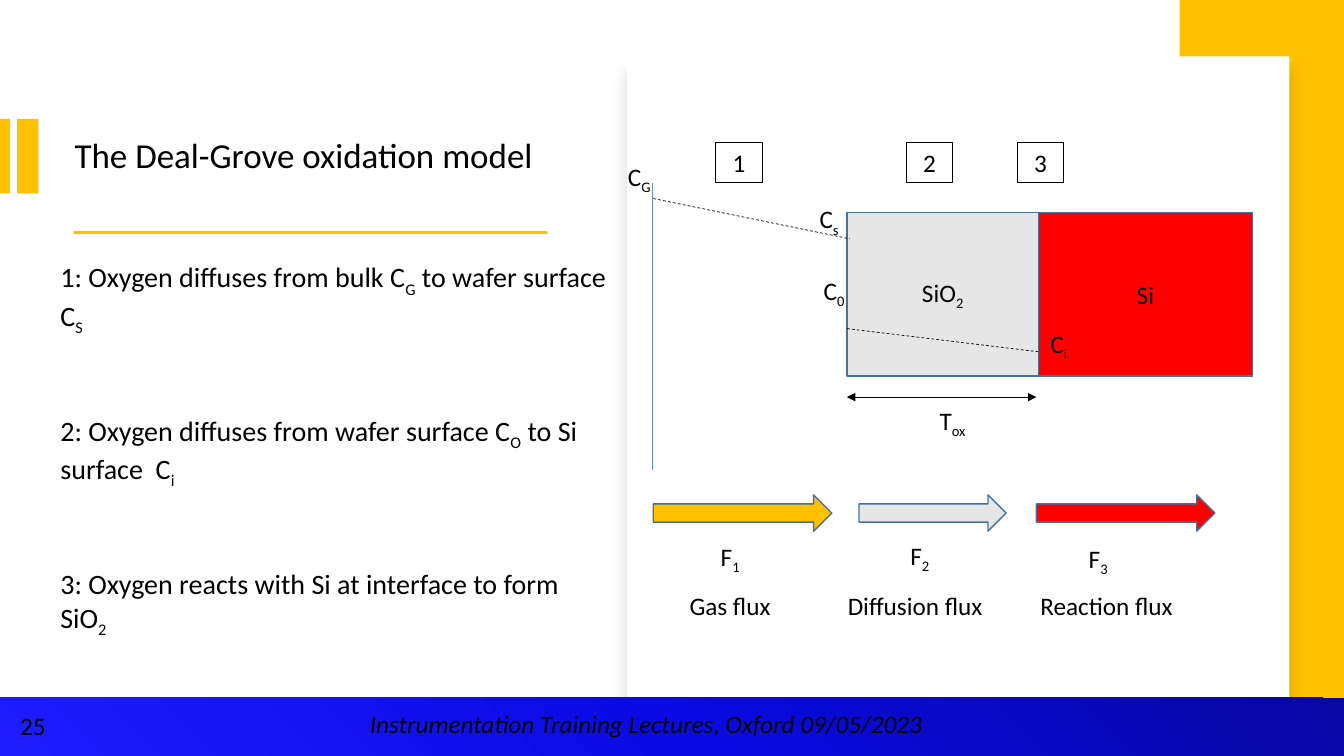
from copy import deepcopy

from lxml import etree
from pptx import Presentation
from pptx import util as u
from pptx.dml.color import RGBColor
from pptx.enum import dml, shapes, text
from pptx.oxml.ns import qn

COLOURS = {
    "black": "000000",
    "white": "FFFFFF",
    "gold": "FFC000",
    "oxide": "E7E6E6",
    "silicon": "FF0000",
    "outline": "43739E",
    "axis": "5B9BD5",
    "bar_dark": "0707A1",
    "bar_middle": "0A0AE5",
    "bar_light": "1D1DFF",
}


def colour(name):
    return RGBColor.from_string(COLOURS[name])


def add_node(parent, tag, **values):
    node = etree.SubElement(parent, qn(tag))
    for name, value in values.items():
        node.set(name, str(value))
    return node


class SlideBuilder:
    font_name = "Calibri"
    font_size = 18

    def __init__(self, page):
        self.page = page

    def add_words(self, frame, paragraphs, font=None, paragraph=None, gap=0):
        font_format = {"name": self.font_name, "size": u.Pt(self.font_size), **(font or {})}
        for index, content in enumerate(paragraphs):
            para = frame.paragraphs[0] if index == 0 else frame.add_paragraph()
            for name, value in (paragraph or {}).items():
                setattr(para, name, value)
            if index and gap:
                para.space_before = u.Pt(gap)
            for part, words in enumerate(content.split("|")):
                if not words:
                    continue
                span = para.add_run()
                span.text = words
                for name, value in font_format.items():
                    setattr(span.font, name, value)
                span.font.color.rgb = colour("black")
                if part % 2:
                    span._r.get_or_add_rPr().set("baseline", "-25000")

    def title(self, words, left, top, width, height):
        box = self.page.shapes.title
        for name, value in dict(left=left, top=top, width=width, height=height).items():
            setattr(box, name, u.Inches(value))
        box.text_frame.word_wrap = True
        box.text_frame.vertical_anchor = text.MSO_ANCHOR.MIDDLE
        layout = {"alignment": text.PP_ALIGN.LEFT, "line_spacing": 0.9, "space_after": u.Pt(6)}
        self.add_words(box.text_frame, [words], {"size": u.Pt(25)}, layout)

    def label(self, paragraphs, left, top, width, height=0.4, wrap=True, font=None, gap=0):
        box = self.page.shapes.add_textbox(*map(u.Inches, (left, top, width, height)))
        box.text_frame.word_wrap = wrap
        box.text_frame.auto_size = text.MSO_AUTO_SIZE.SHAPE_TO_FIT_TEXT
        self.add_words(box.text_frame, paragraphs, font, gap=gap)

    def block(self, left, top, width, height, fill=None, line=None, weight=1,
              words=None, kind=shapes.MSO_SHAPE.RECTANGLE):
        box = self.page.shapes.add_shape(kind, *map(u.Inches, (left, top, width, height)))
        box.shadow.inherit = False
        if fill:
            box.fill.solid()
            box.fill.fore_color.rgb = colour(fill)
        else:
            box.fill.background()
        if line:
            box.line.color.rgb = colour(line)
            box.line.width = u.Pt(weight)
        else:
            box.line.fill.background()
        if words:
            box.text_frame.word_wrap = True
            box.text_frame.vertical_anchor = text.MSO_ANCHOR.MIDDLE
            self.add_words(box.text_frame, [words], paragraph={"alignment": text.PP_ALIGN.CENTER})
        return box

    def panel(self, left, top, width, height):
        box = self.block(left, top, width, height, "white")
        effects = box._element.spPr.find(qn("a:effectLst"))
        shadow = add_node(effects, "a:outerShdw", blurRad=int(u.Pt(11)), dist=int(u.Pt(10)),
                          dir=5400000, algn="t", rotWithShape=0)
        tint = add_node(shadow, "a:srgbClr", val=COLOURS["black"])
        add_node(tint, "a:alpha", val=15000)

    def gradient_bar(self, left, top, width, height, names):
        box = self.block(left, top, width, height)
        box.fill.gradient()
        box.fill.gradient_angle = 225
        stops = box._element.spPr.find(qn("a:gradFill")).find(qn("a:gsLst"))
        stops.insert(1, deepcopy(stops[0]))
        for index, (stop, name) in enumerate(zip(box.fill.gradient_stops, names)):
            stop.position = index / (len(names) - 1)
            stop.color.rgb = colour(name)

    def line(self, start, end, tint="black", dashed=False, arrows=False):
        connector = self.page.shapes.add_connector(
            shapes.MSO_CONNECTOR.STRAIGHT, *map(u.Inches, (*start, *end)))
        connector.line.color.rgb = colour(tint)
        connector.line.width = u.Pt(0.5)
        if dashed:
            connector.line.dash_style = dml.MSO_LINE.DASH
        if arrows:
            for tag in ("a:headEnd", "a:tailEnd"):
                add_node(connector._element.spPr.find(qn("a:ln")), tag, type="triangle")
        add_node(connector._element.spPr, "a:effectLst")


def main():
    deck = Presentation()
    deck.slide_width, deck.slide_height = u.Inches(13.33), u.Inches(7.5)
    slide = SlideBuilder(deck.slides.add_slide(deck.slide_layouts[5]))

    slide.title("The Deal-Grove oxidation model", 0.64, 0.94, 4.99, 1.23)
    for accent in ((0, 1.18, 0.1, 0.74), (0.17, 1.18, 0.21, 0.74),
                   (0.73, 2.29, 4.7, 0.03), (11.7, 0, 1.63, 7.5)):
        slide.block(*accent, "gold")
    slide.panel(6.22, 0.56, 6.57, 6.38)

    slide.line((6.47, 1.82), (6.47, 4.66), "axis")
    slide.block(8.4, 2.11, 1.9, 1.62, "oxide", "outline", words="SiO|2")
    slide.block(10.3, 2.11, 2.12, 1.62, "silicon", "outline", words="Si")
    slide.line((6.48, 1.97), (8.43, 2.37), dashed=True)
    slide.line((8.4, 3.26), (10.3, 3.49), dashed=True)
    slide.line((8.4, 3.94), (10.28, 3.94), arrows=True)

    for words, left, top, width in (
            ("C|G", 6.13, 1.55, 0.44), ("C|s", 8.03, 1.97, 0.4),
            ("C|0", 8.07, 2.68, 0.42), ("C|i", 10.32, 3.21, 0.38),
            ("T|ox", 9.22, 3.97, 0.46), ("F|1", 7.05, 5.32, 0.4),
            ("F|2", 8.93, 5.31, 0.4), ("F|3", 10.7, 5.34, 0.4)):
        slide.label([words], left, top, width, wrap=False)

    for fill, left, width in (("gold", 6.48, 1.77), ("oxide", 8.52, 1.46),
                              ("silicon", 10.28, 1.77)):
        slide.block(left, 4.91, width, 0.36, fill, "outline",
                    kind=shapes.MSO_SHAPE.RIGHT_ARROW)

    for words, left, width in (("Gas flux", 6.74, 1.29), ("Diffusion flux", 8.31, 2.21),
                               ("Reaction flux", 10.22, 2.21)):
        slide.label([words], left, 5.81, width)

    for number, left in enumerate((7.1, 8.99, 10.09), 1):
        slide.block(left, 1.41, 0.46, 0.4, line="black", weight=0.75, words=str(number))

    steps = [
        "1: Oxygen diffuses from bulk C|G| to wafer surface C|S",
        "2: Oxygen diffuses from wafer surface C|O| to Si surface  C|i",
        "3: Oxygen reacts with Si at interface to form SiO|2",
    ]
    slide.label(steps, 0.5, 2.53, 5.61, 3.35, font={"size": u.Pt(20)}, gap=55)

    slide.gradient_bar(0, 6.92, 13.33, 0.58, ("bar_dark", "bar_middle", "bar_light"))
    slide.label(["25"], 0.1, 7, 0.68)
    slide.label(["Instrumentation Training Lectures, Oxford 09/05/2023"],
                3.57, 6.98, 6.67, font={"italic": True})

    deck.save("out.pptx")


if __name__ == "__main__":
    main()
